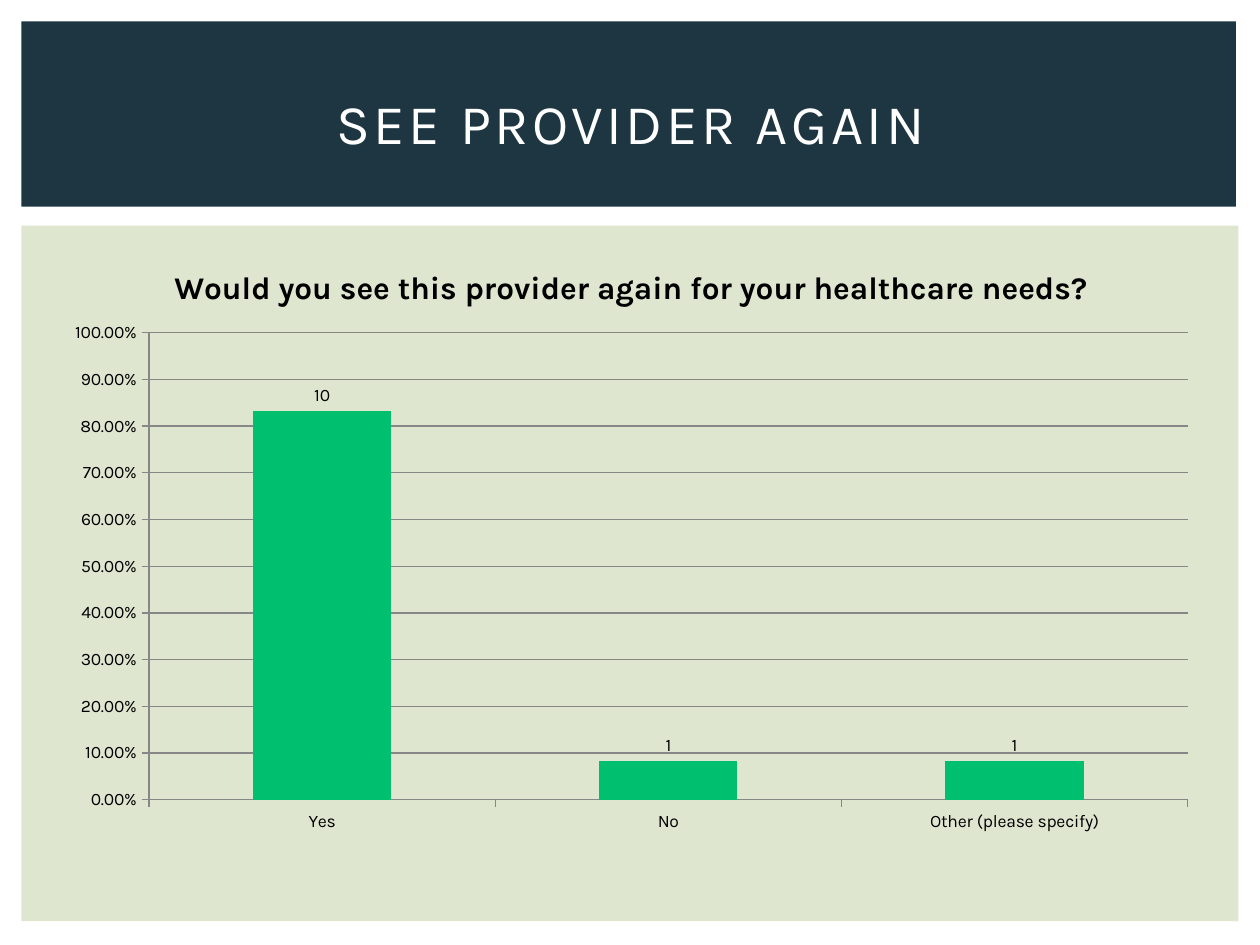
from dataclasses import dataclass

from lxml import etree
from pptx import Presentation
from pptx.chart.data import CategoryChartData
from pptx.dml.color import RGBColor
from pptx.enum.chart import XL_CHART_TYPE, XL_LABEL_POSITION, XL_TICK_MARK
from pptx.enum.shapes import MSO_SHAPE
from pptx.enum.text import MSO_ANCHOR, PP_ALIGN
from pptx.oxml.ns import qn
from pptx.util import Pt

RECT = MSO_SHAPE.RECTANGLE
CENTER = PP_ALIGN.CENTER
MIDDLE = MSO_ANCHOR.MIDDLE
COLUMN = XL_CHART_TYPE.COLUMN_CLUSTERED
OUTSIDE_END = XL_LABEL_POSITION.OUTSIDE_END
TICK_OUT = XL_TICK_MARK.OUTSIDE
TICK_NONE = XL_TICK_MARK.NONE
TITLE_ONLY = 5


@dataclass(frozen=True)
class Theme:
    font: str = "Karla"
    navy: str = "1D3641"
    sage: str = "DFE6D0"
    green: str = "00BF6F"
    grey: str = "878787"
    white: str = "FFFFFF"
    black: str = "000000"
    title_size: float = 32
    chart_title_size: float = 18
    label_size: float = 10


@dataclass(frozen=True)
class Box:
    left: float
    top: float
    width: float
    height: float

    def lengths(self):
        return Pt(self.left), Pt(self.top), Pt(self.width), Pt(self.height)


@dataclass(frozen=True)
class Panel:
    box: Box
    color: str


@dataclass(frozen=True)
class Answer:
    name: str
    share: float
    count: int


THEME = Theme()
PANELS = (
    Panel(Box(12.24, 128.88, 695.52, 397.44), THEME.sage),
    Panel(Box(12.24, 12.24, 694.08, 105.84), THEME.navy),
)
TITLE_BOX = Box(30.24, 28.08, 660.24, 82.8)
CHART_BOX = Box(30.24, 135.36, 661.68, 347.04)
ANSWERS = (
    Answer("Yes", 0.8333, 10),
    Answer("No", 0.0833, 1),
    Answer("Other (please specify)", 0.0833, 1),
)


def set_font(font, size, color=THEME.black, bold=False):
    font.name, font.size, font.bold = THEME.font, Pt(size), bold
    font.color.rgb = RGBColor.from_string(color)


def write(tf, text, *, size, color=THEME.black, bold=False, spacing=0):
    """Put one centred run in a text frame; spacing is in points."""
    p = tf.paragraphs[0]
    p.alignment = CENTER
    r = p.add_run()
    r.text = text
    set_font(r.font, size, color, bold)
    if spacing:
        r.font._element.set("spc", str(spacing * 100))


def add_panel(s, panel: Panel):
    sp = s.shapes.add_shape(RECT, *panel.box.lengths())
    sp.shadow.inherit = False
    sp.fill.solid()
    sp.fill.fore_color.rgb = RGBColor.from_string(panel.color)
    sp.line.fill.background()


def add_title(s, text: str):
    title = s.shapes.title
    title.left, title.top, title.width, title.height = TITLE_BOX.lengths()
    tf = title.text_frame
    tf.word_wrap = True
    tf.vertical_anchor = MIDDLE
    write(tf, text, size=THEME.title_size, color=THEME.white, spacing=2)
    title.element.getparent().append(title.element)  # in front of the panels


def set_layout(parent, index: int, inner=False, **fractions: float):
    """Place a chart part by fractions of the chart's width and height."""
    for old in parent.findall(qn("c:layout")):
        parent.remove(old)
    layout = etree.Element(qn("c:layout"))
    manual = etree.SubElement(layout, qn("c:manualLayout"))
    values = {"layoutTarget": "inner"} if inner else {}
    values |= {"xMode": "edge", "yMode": "edge", **fractions}
    for tag, value in values.items():
        etree.SubElement(manual, qn(f"c:{tag}")).set("val", str(value))
    parent.insert(index, layout)


def set_line(line):
    line.color.rgb = RGBColor.from_string(THEME.grey)
    line.width = Pt(0.75)


def format_axis(axis):
    axis.major_tick_mark = TICK_OUT
    axis.minor_tick_mark = TICK_NONE
    set_font(axis.tick_labels.font, THEME.label_size)
    set_line(axis.format.line)


def add_answer_chart(s, question: str):
    data = CategoryChartData(number_format="0.00%")
    data.categories = [a.name for a in ANSWERS]
    data.add_series("Series 1", [a.share for a in ANSWERS])
    chart = s.shapes.add_chart(COLUMN, *CHART_BOX.lengths(), data).chart
    set_font(chart.font, THEME.label_size)
    chart.has_legend = False
    chart.has_title = True
    title = chart.chart_title
    write(title.text_frame, question, size=THEME.chart_title_size, bold=True)
    title.include_in_layout = False
    set_layout(title._element, 1, x=0.1, y=0.04)

    values = chart.value_axis
    values.minimum_scale, values.maximum_scale, values.major_unit = 0, 1, 0.1
    values.has_major_gridlines = True
    set_line(values.major_gridlines.format.line)
    values.tick_labels.number_format = "0.00%"
    values.tick_labels.number_format_is_linked = False
    for axis in (chart.category_axis, values):
        format_axis(axis)

    plot = chart.plots[0]
    plot.gap_width = 150
    plot.vary_by_categories = False
    set_layout(plot._element.getparent(), 0, inner=True,
               x=0.083, y=0.158, w=0.897, h=0.769)
    series = plot.series[0]
    series.format.fill.solid()
    series.format.fill.fore_color.rgb = RGBColor.from_string(THEME.green)
    labels = series.data_labels
    labels.show_value = True
    labels.number_format = "0.00%"
    labels.number_format_is_linked = False
    labels.position = OUTSIDE_END
    set_font(labels.font, THEME.label_size)
    for i, answer in enumerate(ANSWERS):
        label = series.points[i].data_label
        write(label.text_frame, str(answer.count), size=THEME.label_size)
        label.position = OUTSIDE_END


def main():
    prs = Presentation()
    prs.slide_width, prs.slide_height = Pt(720), Pt(540)
    s = prs.slides.add_slide(prs.slide_layouts[TITLE_ONLY])
    for panel in PANELS:
        add_panel(s, panel)
    add_title(s, "SEE PROVIDER AGAIN")
    add_answer_chart(s, "Would you see this provider again for your healthcare needs?")
    prs.save("out.pptx")


if __name__ == "__main__":
    main()
